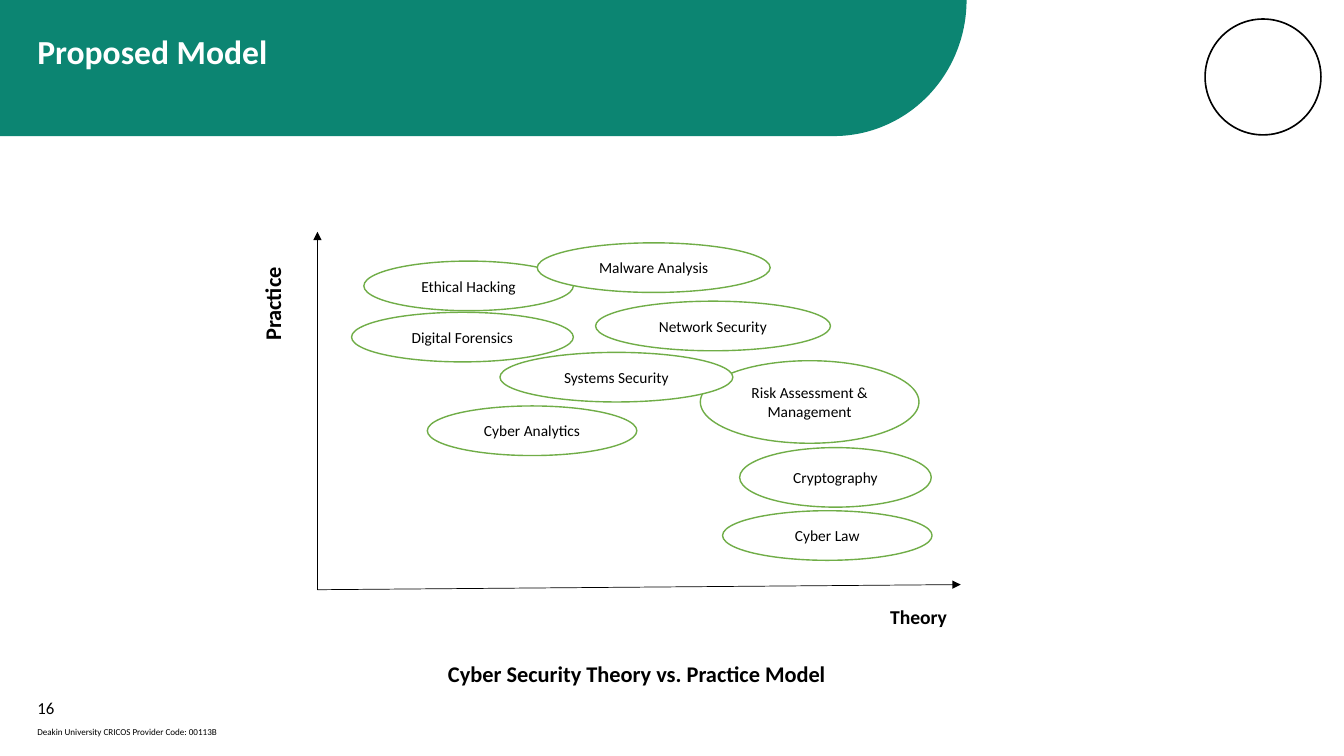
"""Build the slide that places cyber security topics between theory and practice."""
import math

from lxml import etree
from pptx import Presentation
from pptx.dml.color import RGBColor
from pptx.enum import shapes, text
from pptx.oxml import ns
from pptx.util import Cm, Pt

TEAL = RGBColor(0x0C, 0x85, 0x72)
GREEN = RGBColor(0x70, 0xAD, 0x47)
BLACK = RGBColor(0, 0, 0)
WHITE = RGBColor(0xFF, 0xFF, 0xFF)

ORIGIN = (8.0, 14.86)
AXIS_ENDS = [(24.21, 14.73), (8.0, 5.84)]

TOPICS = [
    ("Cryptography", 18.64, 11.28, 4.83, 1.5),
    ("Ethical Hacking", 9.17, 6.58, 5.28, 1.25),
    ("Cyber Analytics", 10.77, 10.23, 5.28, 1.25),
    ("Digital Forensics", 8.86, 7.87, 5.59, 1.25),
    ("Risk Assessment & Management", 17.65, 9.09, 5.51, 2.08),
    ("Cyber Law", 18.21, 12.87, 5.28, 1.25),
    ("Network Security", 15.01, 7.59, 5.92, 1.25),
    ("Systems Security", 12.6, 8.88, 5.87, 1.25),
    ("Malware Analysis", 13.54, 6.12, 5.87, 1.25),
]


def write(shape, words, size=11, color=BLACK, bold=False, centered=False,
          middle=False, spacing=None):
    """Put one formatted paragraph into a shape."""
    frame = shape.text_frame
    frame.word_wrap = True
    anchors = text.MSO_ANCHOR
    frame.vertical_anchor = anchors.MIDDLE if middle else anchors.TOP
    para = frame.paragraphs[0]
    para.alignment = text.PP_ALIGN.CENTER if centered else text.PP_ALIGN.LEFT
    para.line_spacing = spacing
    span = para.add_run()
    span.text = words
    span.font.name = "Calibri"
    span.font.size = Pt(size)
    span.font.bold = bold
    span.font.color.rgb = color


def add_label(page, words, left, top, width, height, turn=0, **style):
    """Add a text box."""
    box = page.shapes.add_textbox(Cm(left), Cm(top), Cm(width), Cm(height))
    box.rotation = turn
    write(box, words, **style)


def add_ellipse(page, left, top, width, height, color, weight):
    """Add a white ellipse with a coloured outline."""
    ellipse = page.shapes.add_shape(
        shapes.MSO_SHAPE.OVAL, Cm(left), Cm(top), Cm(width), Cm(height))
    ellipse.shadow.inherit = False
    ellipse.fill.solid()
    ellipse.fill.fore_color.rgb = WHITE
    ellipse.line.color.rgb = color
    ellipse.line.width = Pt(weight)
    return ellipse


def add_banner(page, width, height, corner):
    """Add the title banner with its rounded lower right corner."""
    angles = [math.radians(step * 1.5) for step in range(61)]
    curve = [(Cm(width - corner + corner * math.cos(angle)),
              Cm(height * math.sin(angle))) for angle in angles]
    builder = page.shapes.build_freeform(0, 0)
    builder.add_line_segments(curve + [(0, Cm(height))])
    banner = builder.convert_to_shape()
    banner.shadow.inherit = False
    banner.fill.solid()
    banner.fill.fore_color.rgb = TEAL
    banner.line.fill.background()


def add_axis(page, start, end):
    """Add a thin black line with an arrowhead at its end."""
    axis = page.shapes.add_connector(
        shapes.MSO_CONNECTOR.STRAIGHT, *(Cm(value) for value in start + end))
    axis.line.color.rgb = BLACK
    axis.line.width = Pt(0.5)
    outline = axis.line._get_or_add_ln()
    etree.SubElement(outline, ns.qn("a:tailEnd"), type="triangle")
    etree.SubElement(axis._element.spPr, ns.qn("a:effectLst"))


def main():
    """Build and save the deck."""
    deck = Presentation()
    deck.slide_width, deck.slide_height = Cm(33.87), Cm(19.05)
    page = deck.slides.add_slide(deck.slide_layouts[6])

    add_banner(page, 24.36, 3.43, 3.35)
    add_ellipse(page, 30.37, 0.48, 2.92, 2.92, BLACK, 1.15)
    add_label(page, "Proposed Model", 0.69, 0.76, 23.7, 2.67,
              size=24, color=WHITE, bold=True, spacing=0.9)
    add_label(page, "16", 0.69, 17.48, 1.6, 0.69, size=12, middle=True)
    add_label(page, "Deakin University CRICOS Provider Code: 00113B",
              0.69, 18.16, 18.39, 0.56, size=6.5, middle=True)

    for end in AXIS_ENDS:
        add_axis(page, ORIGIN, end)
    add_label(page, "Theory", 21.18, 15.11, 3.94, 1.22,
              size=14, bold=True, centered=True)
    add_label(page, "Practice", 5.18, 6.32, 3.73, 1.3, turn=270,
              size=16, bold=True)
    add_label(page, "Cyber Security Theory vs. Practice Model",
              8.38, 16.51, 15.34, 1.24, size=16, bold=True, centered=True)

    for topic, *place in TOPICS:
        ellipse = add_ellipse(page, *place, GREEN, 1)
        write(ellipse, topic, centered=True, middle=True)

    deck.save("out.pptx")


if __name__ == "__main__":
    main()
